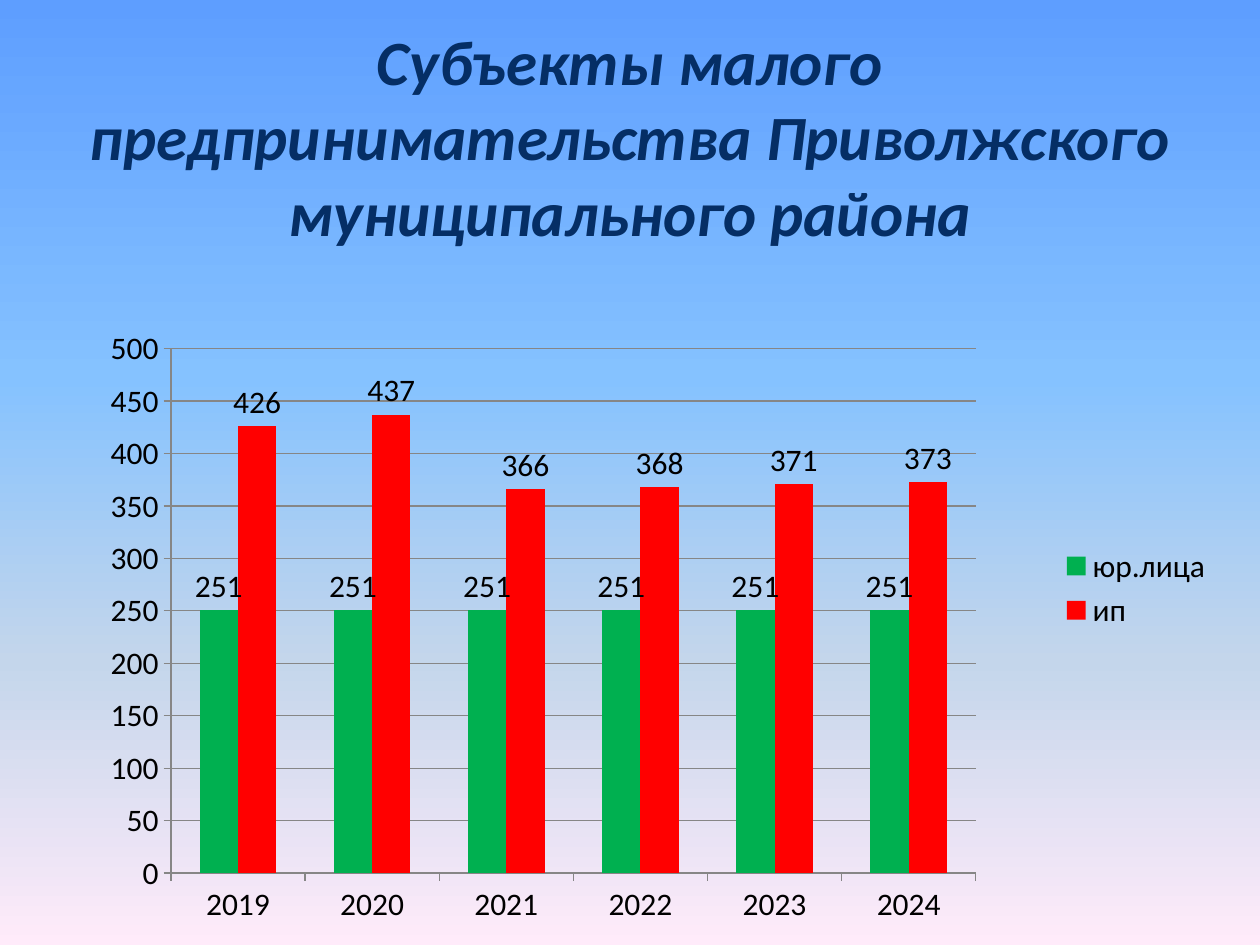
import pptx
import pptx.util
import pptx.chart.data
import pptx.dml.color
import pptx.enum.chart
import pptx.enum.text
import pptx.oxml
import pptx.oxml.ns

Inches = pptx.util.Inches
Pt = pptx.util.Pt
RGB = pptx.dml.color.RGBColor
NAVY = RGB(0x05, 0x2E, 0x65)
BLACK = RGB(0, 0, 0)
GREEN = RGB(0x00, 0xB0, 0x50)
RED = RGB(0xFF, 0, 0)
GRAY = RGB(0x86, 0x86, 0x86)
SKY = [
    (0, RGB(0x5E, 0x9E, 0xFF)),
    (40, RGB(0x85, 0xC2, 0xFF)),
    (70, RGB(0xC4, 0xD6, 0xEB)),
    (100, RGB(0xFF, 0xEB, 0xFA)),
]
FONT = "Calibri"

deck = pptx.Presentation()
deck.slide_width = Inches(10)
deck.slide_height = Inches(7.5)
slide = deck.slides.add_slide(deck.slide_layouts[6])

# Background: four-stop gradient running downwards
fill = slide.background.fill
fill.gradient()
grad = slide.background._cSld.find(".//" + pptx.oxml.ns.qn("a:gradFill"))
for part in list(grad):
    grad.remove(part)
stops = "".join(
    f'<a:gs pos="{pos * 1000}"><a:srgbClr val="{tint}"/></a:gs>' for pos, tint in SKY
)
space = pptx.oxml.ns.nsdecls("a")
grad.append(pptx.oxml.parse_xml(f"<a:gsLst {space}>{stops}</a:gsLst>"))
grad.append(pptx.oxml.parse_xml(f'<a:lin {space} ang="5400000" scaled="0"/>'))

# Title
box = slide.shapes.add_textbox(Inches(0.5), Inches(0.13), Inches(9), Inches(1.89))
frame = box.text_frame
frame.word_wrap = True
frame.vertical_anchor = pptx.enum.text.MSO_ANCHOR.MIDDLE
para = frame.paragraphs[0]
para.alignment = pptx.enum.text.PP_ALIGN.CENTER
run = para.add_run()
run.text = "Субъекты малого предпринимательства Приволжского муниципального района"
run.font.name = FONT
run.font.size = Pt(36)
run.font.bold = True
run.font.italic = True
run.font.color.rgb = NAVY

# Chart
data = pptx.chart.data.CategoryChartData()
data.categories = [str(year) for year in range(2019, 2025)]
data.add_series("юр.лица", [251] * 6)
data.add_series("ип", [426, 437, 366, 368, 371, 373])
chart = slide.shapes.add_chart(
    pptx.enum.chart.XL_CHART_TYPE.COLUMN_CLUSTERED,
    Inches(0.28), Inches(2.02), Inches(9.45), Inches(5.31), data,
).chart
chart.has_title = False
chart.font.name = FONT
chart.font.size = Pt(18)
chart.font.color.rgb = BLACK

# Columns and their values
plot = chart.plots[0]
plot.gap_width = 150
plot.overlap = 0
plot.vary_by_categories = False
for series, tint in zip(plot.series, (GREEN, RED)):
    series.format.fill.solid()
    series.format.fill.fore_color.rgb = tint
    labels = series.data_labels
    labels.show_value = True
    labels.position = pptx.enum.chart.XL_LABEL_POSITION.OUTSIDE_END

# Axes and grid
value = chart.value_axis
value.minimum_scale = 0
value.maximum_scale = 500
value.major_unit = 50
value.has_major_gridlines = True
for axis in (value, chart.category_axis):
    axis.major_tick_mark = pptx.enum.chart.XL_TICK_MARK.OUTSIDE
    axis.minor_tick_mark = pptx.enum.chart.XL_TICK_MARK.NONE
for item in (value, chart.category_axis, value.major_gridlines):
    item.format.line.color.rgb = GRAY
    item.format.line.width = Pt(0.75)

# Legend
chart.has_legend = True
chart.legend.position = pptx.enum.chart.XL_LEGEND_POSITION.RIGHT
chart.legend.include_in_layout = False

# Fixed inner plot area
area = chart._chartSpace.chart.plotArea
for old in area.findall(pptx.oxml.ns.qn("c:layout")):
    area.remove(old)
place = '<c:layoutTarget val="inner"/><c:xMode val="edge"/><c:yMode val="edge"/>'
for key, size in zip("xywh", (0.114, 0.141, 0.676, 0.786)):
    place += f'<c:{key} val="{size:.3f}"/>'
space = pptx.oxml.ns.nsdecls("c")
area.insert(0, pptx.oxml.parse_xml(
    f"<c:layout {space}><c:manualLayout>{place}</c:manualLayout></c:layout>"
))

deck.save("out.pptx")
